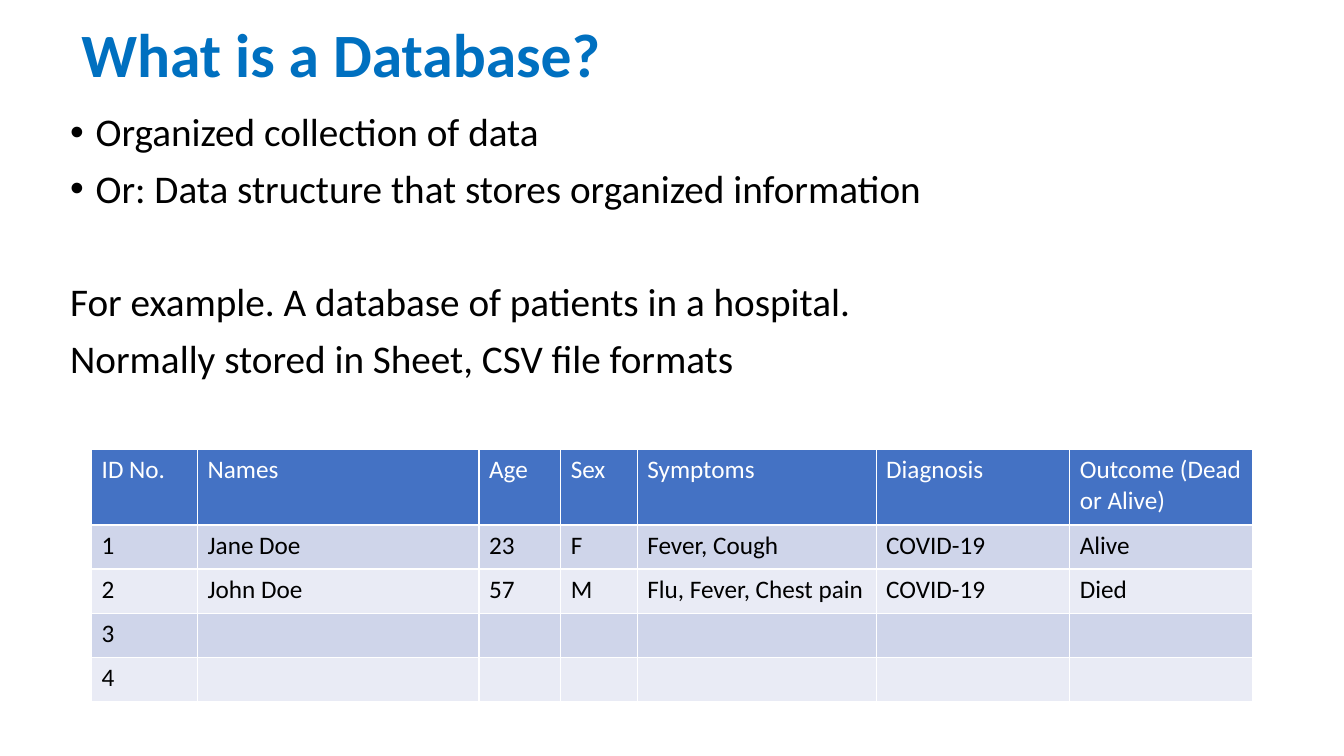
from lxml import etree
from pptx import Presentation
from pptx import util as u
from pptx.dml.color import RGBColor
from pptx.enum import text
from pptx.oxml import ns

FONT = "Calibri"
TITLE_BLUE = RGBColor(0x00, 0x70, 0xC0)
HEADER_BLUE = RGBColor(0x44, 0x72, 0xC4)
BAND_DARK = RGBColor(0xCF, 0xD5, 0xEA)
BAND_LIGHT = RGBColor(0xE9, 0xEB, 0xF5)
WHITE = RGBColor(0xFF, 0xFF, 0xFF)
BLACK = RGBColor(0x00, 0x00, 0x00)

TITLE_FORMAT = {"name": FONT, "size": u.Pt(44), "bold": True}
BODY_FORMAT = {"name": FONT, "size": u.Pt(28), "bold": False}
CELL_FORMAT = {"name": FONT, "size": u.Pt(18), "bold": False}

# Wording, bulleted or not, space before in points
BODY_LINES = [
    ("Organized collection of data", True, 10),
    ("Or: Data structure that stores organized information", True, 10),
    ("For example. A database of patients in a hospital.", False, 51),
    ("Normally stored in Sheet, CSV file formats", False, 10),
]

COLUMN_WIDTHS = [2.67, 7.09, 2.06, 1.93, 6.02, 4.88, 4.6]
HEADER_HEIGHT = 1.9
ROW_HEIGHT = 1.11
PATIENTS = [
    ["ID No.", "Names", "Age", "Sex", "Symptoms", "Diagnosis", "Outcome (Dead or Alive)"],
    ["1", "Jane Doe", "23", "F", "Fever, Cough", "COVID-19", "Alive"],
    ["2", "John Doe", "57", "M", "Flu, Fever, Chest pain", "COVID-19", "Died"],
    ["3"] + [""] * 6,
    ["4"] + [""] * 6,
]


def apply_format(target, values):
    for name, value in values.items():
        setattr(target, name, value)


def write(paragraph, wording, font_format, color):
    paragraph.text = wording
    apply_format(paragraph.font, font_format)
    paragraph.font.color.rgb = color


def add_text_box(slide, left, top, width, height, anchor):
    shape = slide.shapes.add_textbox(u.Cm(left), u.Cm(top), u.Cm(width), u.Cm(height))
    apply_format(shape.text_frame, {"word_wrap": True, "vertical_anchor": anchor})
    return shape.text_frame


def add_bullet(paragraph):
    """Give the paragraph a round bullet with a hanging indent."""
    properties = paragraph._p.get_or_add_pPr()
    indent = u.Cm(0.64)
    properties.set("marL", str(indent))
    properties.set("indent", str(-indent))
    etree.SubElement(properties, ns.qn("a:buFont")).set("typeface", "Arial")
    etree.SubElement(properties, ns.qn("a:buChar")).set("char", "•")


def add_title(slide):
    frame = add_text_box(slide, 1.8, 0, 29.21, 2.92, text.MSO_ANCHOR.MIDDLE)
    paragraph = frame.paragraphs[0]
    write(paragraph, "What is a Database?", TITLE_FORMAT, TITLE_BLUE)
    paragraph.line_spacing = 0.9


def add_body(slide):
    frame = add_text_box(slide, 1.52, 2.72, 30.02, 14.45, text.MSO_ANCHOR.TOP)
    for index, (wording, bulleted, space_before) in enumerate(BODY_LINES):
        paragraph = frame.add_paragraph() if index else frame.paragraphs[0]
        write(paragraph, wording, BODY_FORMAT, BLACK)
        apply_format(paragraph, {"line_spacing": 0.9, "space_before": u.Pt(space_before)})
        if bulleted:
            add_bullet(paragraph)


def row_colors(row_index):
    """Return the fill and the text colour of a table row."""
    if row_index == 0:
        return HEADER_BLUE, WHITE
    return (BAND_DARK if row_index % 2 else BAND_LIGHT), BLACK


def add_patient_table(slide):
    heights = [HEADER_HEIGHT] + [ROW_HEIGHT] * (len(PATIENTS) - 1)
    table = slide.shapes.add_table(
        len(PATIENTS), len(COLUMN_WIDTHS), u.Cm(2.31), u.Cm(11.33),
        u.Cm(sum(COLUMN_WIDTHS)), u.Cm(sum(heights))).table
    for column, width in zip(table.columns, COLUMN_WIDTHS):
        column.width = u.Cm(width)
    for row_index, (row, height) in enumerate(zip(table.rows, heights)):
        row.height = u.Cm(height)
        fill_color, text_color = row_colors(row_index)
        for cell, wording in zip(row.cells, PATIENTS[row_index]):
            cell.fill.solid()
            cell.fill.fore_color.rgb = fill_color
            write(cell.text_frame.paragraphs[0], wording, CELL_FORMAT, text_color)


def main():
    presentation = Presentation()
    presentation.slide_width = u.Cm(33.87)
    presentation.slide_height = u.Cm(19.05)
    slide = presentation.slides.add_slide(presentation.slide_layouts[6])
    add_title(slide)
    add_body(slide)
    add_patient_table(slide)
    presentation.save("out.pptx")


if __name__ == "__main__":
    main()
